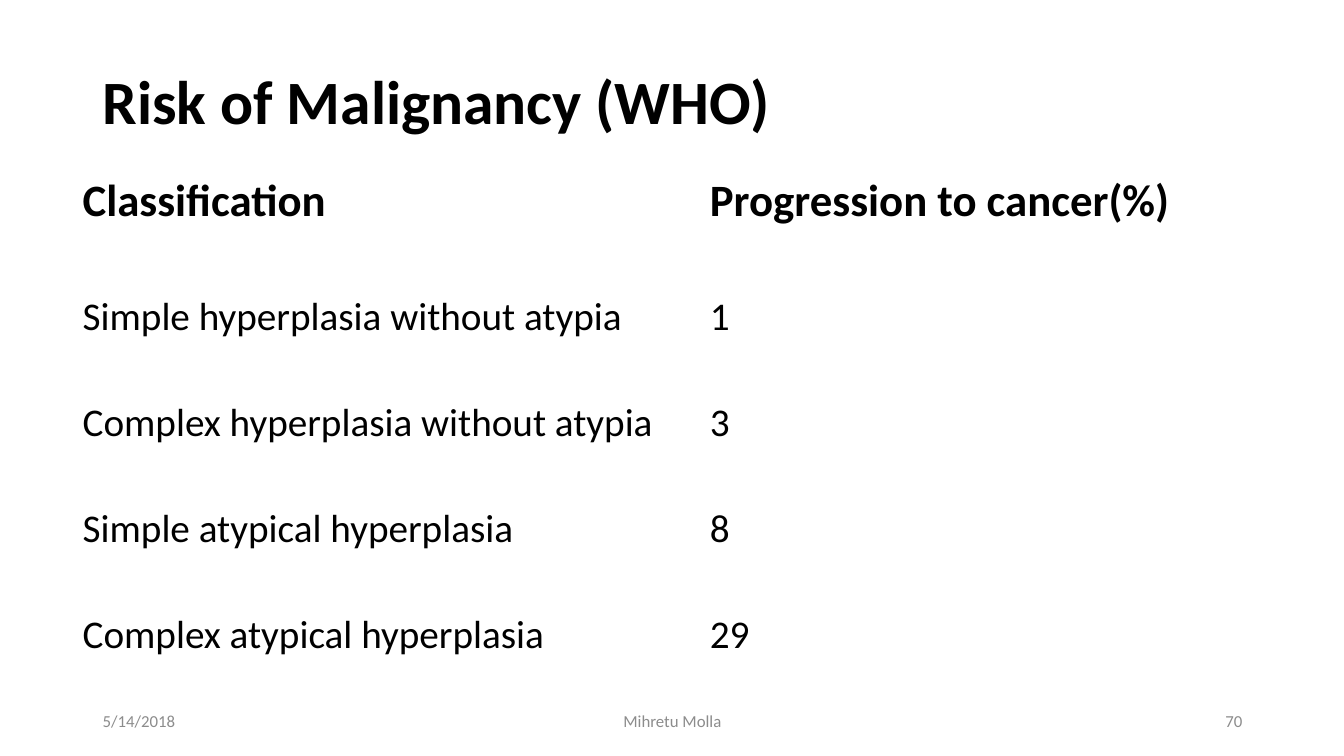
from dataclasses import dataclass

from pptx import Presentation
from pptx.dml.color import RGBColor
from pptx.enum.text import MSO_ANCHOR, PP_ALIGN
from pptx.util import Pt

PX = 9144  # EMU in one px, 100 px to the inch
LEFT, CENTER, RIGHT = PP_ALIGN.LEFT, PP_ALIGN.CENTER, PP_ALIGN.RIGHT
TOP, MIDDLE = MSO_ANCHOR.TOP, MSO_ANCHOR.MIDDLE


@dataclass(frozen=True)
class Theme:
    font: str = "Calibri"
    ink: RGBColor = RGBColor(0x00, 0x00, 0x00)
    muted: RGBColor = RGBColor(0x8C, 0x8C, 0x8C)
    title_size: int = 44
    header_size: int = 32
    body_size: int = 28
    footer_size: int = 12


THEME = Theme()

RISKS = [
    ("Classification", "Progression to cancer(%)"),
    ("Simple hyperplasia without atypia", "1"),
    ("Complex hyperplasia without atypia", "3"),
    ("Simple atypical hyperplasia", "8"),
    ("Complex atypical hyperplasia", "29"),
]


def scaled(*lengths):
    return [length * PX for length in lengths]


def write(frame, text, *, size, color=THEME.ink, bold=False, align=LEFT, spacing=None):
    para = frame.paragraphs[0]
    para.alignment = align
    para.line_spacing = spacing
    span = para.add_run()
    span.text = text
    span.font.name = THEME.font
    span.font.size = Pt(size)
    span.font.bold = bold
    span.font.color.rgb = color


def add_text(page, box, text, **text_format):
    frame = page.shapes.add_textbox(*scaled(*box)).text_frame
    frame.word_wrap = True
    frame.vertical_anchor = MIDDLE
    write(frame, text, **text_format)


def add_title(page, box, text):
    add_text(page, box, text, size=THEME.title_size, bold=True, spacing=0.9)


def add_risk_table(page, box, rows, column_widths, row_heights):
    """Place a plain table whose first row is a bold header."""
    table = page.shapes.add_table(len(rows), len(column_widths), *scaled(*box)).table
    table.first_row = False
    table.horz_banding = False
    for column, width in zip(table.columns, scaled(*column_widths)):
        column.width = width
    for row, height in zip(table.rows, scaled(*row_heights)):
        row.height = height
    for row_index, row in enumerate(rows):
        is_header = row_index == 0
        size = THEME.header_size if is_header else THEME.body_size
        for column_index, text in enumerate(row):
            cell = table.cell(row_index, column_index)
            cell.fill.background()
            cell.vertical_anchor = TOP
            write(cell.text_frame, text, size=size, bold=is_header)


def add_footer(page, box, date, author, number):
    """Set the date left, the author centred and the page number right."""
    left, top, width, height = box
    side, middle = 300, 450
    parts = [
        (date, left, side, LEFT),
        (author, left + (width - middle) // 2, middle, CENTER),
        (number, left + width - side, side, RIGHT),
    ]
    for text, part_left, part_width, align in parts:
        add_text(page, (part_left, top, part_width, height), text,
                 size=THEME.footer_size, color=THEME.muted, align=align)


def main():
    deck = Presentation()
    deck.slide_width, deck.slide_height = scaled(1333, 750)
    page = deck.slides.add_slide(deck.slide_layouts[6])
    add_title(page, (92, 40, 1150, 127), "Risk of Malignancy (WHO)")
    row_heights = [119] + [105] * (len(RISKS) - 2) + [116]
    add_risk_table(page, (72, 167, 1150, sum(row_heights)), RISKS, [622, 528], row_heights)
    add_footer(page, (92, 695, 1150, 40), "5/14/2018", "Mihretu Molla", "70")
    deck.save("out.pptx")


if __name__ == "__main__":
    main()
